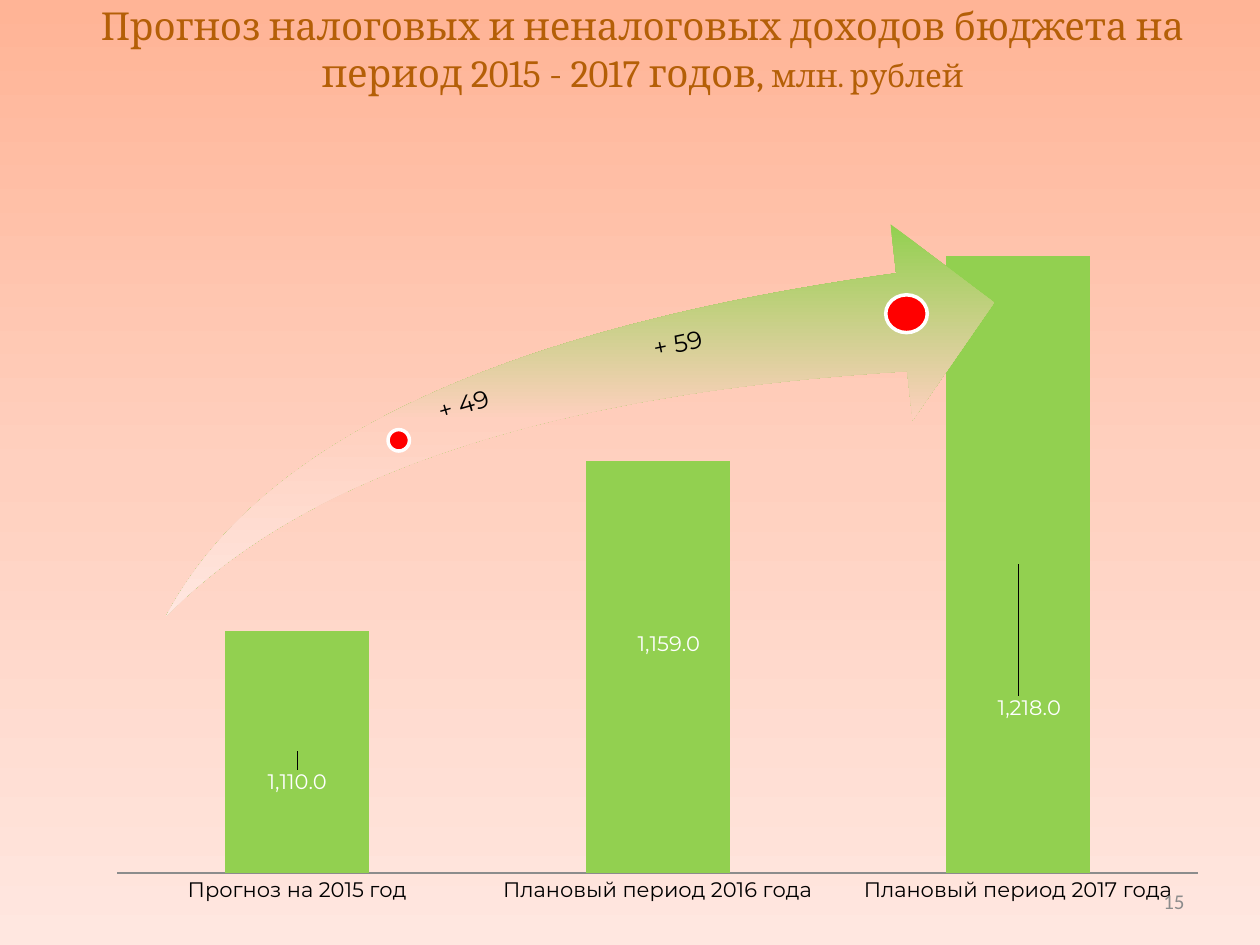
from copy import deepcopy

from pptx import Presentation
from pptx import util as u
from pptx.chart import data as chart_data
from pptx.dml.color import RGBColor
from pptx.enum import chart as ch, shapes, text
from pptx.oxml import parse_xml
from pptx.oxml.ns import nsdecls, qn

GREEN, PEACH, PALE = "92D050", "FFD0BF", "FFE7E0"
FORECAST = {
    "Прогноз на 2015 год": 1110,
    "Плановый период 2016 года": 1159,
    "Плановый период 2017 года": 1218,
}
VALUE_OFFSETS = [(0, 0.04), (0.01, -0.03), (0.01, 0.19)]
VALUE_FORMAT = "#,##0.0"


def rgb(value):
    return RGBColor.from_string(value)


def box_inches(*box):
    return [u.Inches(length) for length in box]


def apply(target, **values):
    for name, value in values.items():
        setattr(target, name, value)


def style_font(font, face, size, color):
    apply(font, name=face, size=u.Pt(size), bold=False)
    font.color.rgb = rgb(color)


def fade_down(fill, owner, colors):
    fill.gradient()
    fill.gradient_angle = 270
    stops = owner.find(".//" + qn("a:gsLst"))
    stops.append(deepcopy(stops[-1]))
    for index, (stop, color) in enumerate(zip(fill.gradient_stops, colors)):
        stop.color.rgb = rgb(color)
        stop.position = index / (len(colors) - 1)


def manual_layout(target, **values):
    parts = "".join(f'<c:{name} val="{value}"/>' for name, value in values.items())
    return parse_xml(
        f'<c:layout {nsdecls("c")}><c:manualLayout>{parts}</c:manualLayout></c:layout>'
        if target == "label" else
        f'<c:layout {nsdecls("c")}><c:manualLayout><c:layoutTarget val="inner"/>'
        f'<c:xMode val="edge"/><c:yMode val="edge"/>{parts}</c:manualLayout></c:layout>'
    )


def add_title(slide, box):
    title = slide.shapes.title
    apply(title, **dict(zip(("left", "top", "width", "height"), box_inches(*box))))
    frame = title.text_frame
    apply(frame, word_wrap=True, auto_size=text.MSO_AUTO_SIZE.NONE,
          vertical_anchor=text.MSO_ANCHOR.MIDDLE)
    heading = frame.paragraphs[0]
    heading.alignment = text.PP_ALIGN.CENTER
    wording = [
        ("Прогноз налоговых и неналоговых доходов бюджета на период 2015 - 2017 годов, ", 22),
        ("млн. рублей", 18),
    ]
    for words, size in wording:
        run = heading.add_run()
        run.text = words
        style_font(run.font, "Cambria", size, "B45F07")


def add_label(parent, box, words, font, insets=(0.1, 0.05, 0.1, 0.05), rotation=0,
              anchor=text.MSO_ANCHOR.TOP, **paragraph_format):
    label = parent.add_textbox(*box_inches(*box))
    label.rotation = rotation
    frame = label.text_frame
    margins = ("margin_left", "margin_top", "margin_right", "margin_bottom")
    apply(frame, word_wrap=True, vertical_anchor=anchor,
          **dict(zip(margins, box_inches(*insets))))
    paragraph = frame.paragraphs[0]
    apply(paragraph, **paragraph_format)
    run = paragraph.add_run()
    run.text = words
    style_font(run.font, *font)


def add_forecast_chart(slide, box):
    forecast = chart_data.CategoryChartData(number_format=VALUE_FORMAT)
    forecast.categories = list(FORECAST)
    forecast.add_series("Series 1", list(FORECAST.values()))
    chart = slide.shapes.add_chart(
        ch.XL_CHART_TYPE.COLUMN_CLUSTERED, *box_inches(*box), forecast).chart
    apply(chart, has_legend=False, has_title=False)
    style_font(chart.font, "Montserrat", 12, "000000")

    apply(chart.value_axis, minimum_scale=1040, maximum_scale=1240,
          has_major_gridlines=False, visible=False)
    years = chart.category_axis
    apply(years, major_tick_mark=ch.XL_TICK_MARK.NONE)
    years.format.line.color.rgb = rgb("8C8C8C")
    years.format.line.width = u.Pt(1)

    plot = chart.plots[0]
    apply(plot, gap_width=150, vary_by_categories=False)
    bars = plot.series[0]
    bars.format.fill.solid()
    bars.format.fill.fore_color.rgb = rgb(GREEN)
    values = bars.data_labels
    apply(values, show_value=True, number_format=VALUE_FORMAT, number_format_is_linked=False)
    style_font(values.font, "Montserrat", 12, "FFFFFF")
    for index, (x, y) in enumerate(VALUE_OFFSETS):
        value = bars.points[index].data_label
        value.position = ch.XL_LABEL_POSITION.CENTER
        style_font(value.font, "Montserrat", 12, "FFFFFF")
        entry = bars.data_labels._element.findall(qn("c:dLbl"))[index]
        entry.insert(1, manual_layout("label", x=x, y=y))

    plot_area = chart._chartSpace.find(".//" + qn("c:plotArea"))
    for layout in plot_area.findall(qn("c:layout")):
        plot_area.remove(layout)
    plot_area.insert(0, manual_layout("plot", x=0.02, y=0.02, w=0.96, h=0.92))


def add_growth_arrow(slide, box):
    left, top, width, height = box
    growth = slide.shapes.add_group_shape().shapes
    arrow = growth.add_shape(shapes.MSO_SHAPE.SWOOSH_ARROW, *box_inches(*box))
    arrow.shadow.inherit = False
    arrow.adjustments[0] = arrow.adjustments[1] = 0.25
    arrow.line.fill.background()
    fade_down(arrow.fill, arrow._element, [GREEN, PEACH, PALE])

    steps = [
        ((1.76, 1.63, 0.17, 0.17), "+ 49", (2.06, 1.24, 1.28, 0.26), 344, 0.09),
        ((5.71, 0.56, 0.33, 0.3), "+ 59", (3.7, 0.72, 2.03, 0.29), 348.3, 0.16),
    ]
    for dot_box, increase, label_box, rotation, inset in steps:
        (dx, dy, *dot_size), (lx, ly, *label_size) = dot_box, label_box
        dot = growth.add_shape(shapes.MSO_SHAPE.OVAL,
                               *box_inches(left + dx, top + dy, *dot_size))
        dot.shadow.inherit = False
        dot.fill.solid()
        dot.fill.fore_color.rgb = rgb("FF0000")
        dot.line.color.rgb = rgb("FFFFFF")
        dot.line.width = u.Pt(2)
        add_label(growth, (left + lx, top + ly, *label_size), increase,
                  ("Montserrat", 14, "000000"), (inset, 0, 0, 0), rotation,
                  line_spacing=0.9)


def main():
    deck = Presentation()
    apply(deck, slide_width=u.Inches(10), slide_height=u.Inches(7.5))
    slide = deck.slides.add_slide(deck.slide_layouts[5])
    fade_down(slide.background.fill, slide._element, ["FFB496", PEACH, PALE])
    add_forecast_chart(slide, (0.75, 1.31, 8.94, 5.98))
    add_title(slide, (0.2, 0, 9.8, 0.77))
    add_growth_arrow(slide, (1.32, 1.78, 6.57, 3.11))
    add_label(slide.shapes, (7.17, 6.95, 2.33, 0.4), "15", ("Calibri", 12, "8C8C8C"),
              anchor=text.MSO_ANCHOR.MIDDLE, alignment=text.PP_ALIGN.RIGHT)
    deck.save("out.pptx")


if __name__ == "__main__":
    main()
